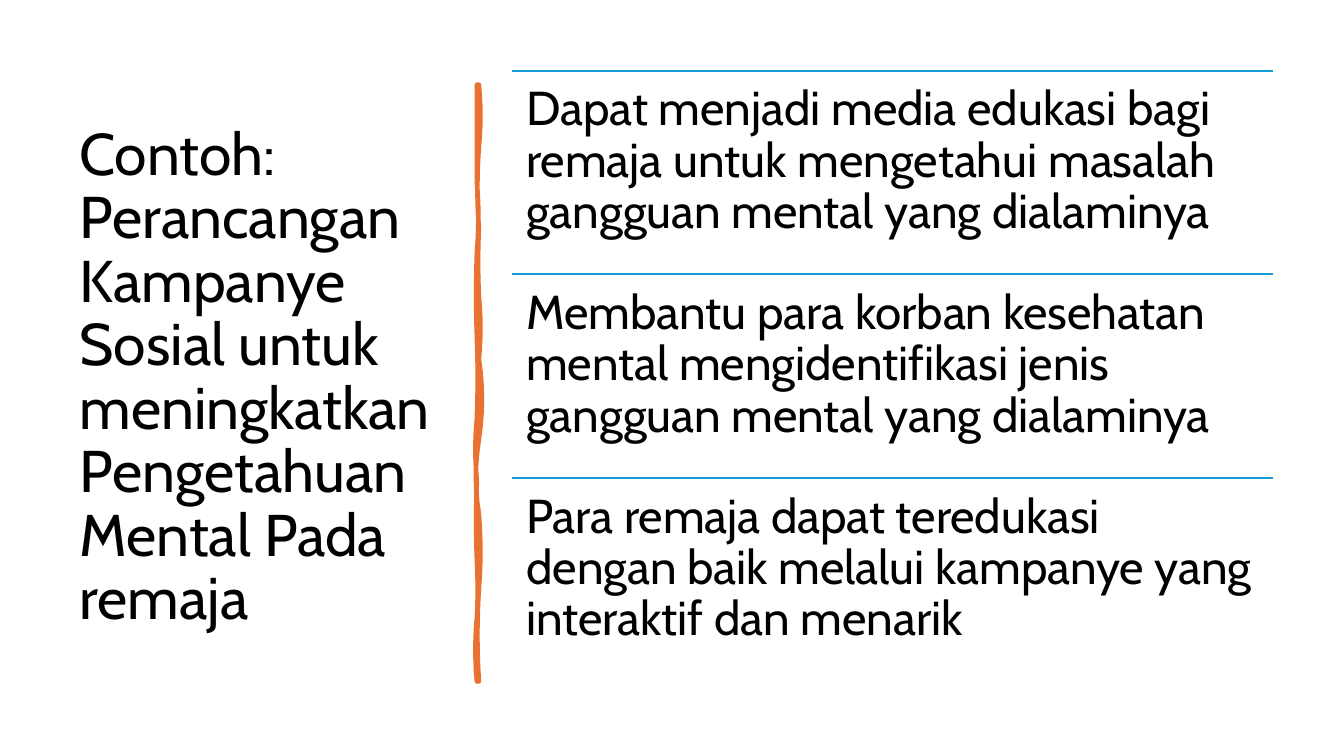
from lxml import etree
from pptx import Presentation
from pptx import util as u
from pptx.dml.color import RGBColor
from pptx.enum import shapes, text
from pptx.oxml.ns import qn

COLORS = {"text": "000000", "brush": "E97132", "rule": "0F9ED5"}
FONT = "Cabin"
TITLE = "Contoh: Perancangan Kampanye Sosial untuk meningkatkan Pengetahuan Mental Pada remaja"
BENEFITS = [
    "Dapat menjadi media edukasi bagi remaja untuk mengetahui masalah gangguan mental yang dialaminya",
    "Membantu para korban kesehatan mental mengidentifikasi jenis gangguan mental yang dialaminya",
    "Para remaja dapat teredukasi dengan baik melalui kampanye yang interaktif dan menarik",
]
# Each wave of the brush stroke: sideways bulge and the height where it ends, in inches
RIGHT_WAVES = [(0.02, 1.46), (-0.02, 2.26), (-0.01, 2.94), (0.02, 3.56), (0.04, 4.36),
               (-0.04, 5.1), (0.02, 5.84), (-0.02, 6.76)]
LEFT_WAVES = [(-0.02, 6.13), (0.01, 5.57), (-0.01, 4.77), (-0.02, 4.15), (0.01, 3.35),
              (-0.01, 2.5), (0.02, 1.81), (0, 0.84)]


def color(name):
    return RGBColor.from_string(COLORS[name])


def add_text(slide, box, words, size, inset_x, inset_y, anchor):
    frame = slide.shapes.add_textbox(*map(u.Inches, box)).text_frame
    frame_format = {
        "word_wrap": True, "vertical_anchor": anchor,
        "margin_left": u.Inches(inset_x), "margin_right": u.Inches(inset_x),
        "margin_top": u.Inches(inset_y), "margin_bottom": u.Inches(inset_y),
    }
    for name, value in frame_format.items():
        setattr(frame, name, value)
    paragraph = frame.paragraphs[0]
    paragraph.line_spacing = 0.9
    run = paragraph.add_run()
    run.text = words
    for name, value in {"name": FONT, "size": u.Pt(size)}.items():
        setattr(run.font, name, value)
    run.font.color.rgb = color("text")


def wave_points(x, top, waves, steps=6):
    """Sample one wavy edge, bulging between the ends of its waves."""
    points = []
    for bulge, bottom in waves:
        for step in range(1, steps + 1):
            t = step / steps
            points.append((u.Inches(x + 3 * bulge * t * (1 - t)),
                           u.Inches(top + (bottom - top) * t)))
        top = bottom
    return points


def add_brush_stroke(slide, left, top, width, height):
    right, bottom = left + width, top + height
    builder = slide.shapes.build_freeform(u.Inches(right), u.Inches(top))
    builder.add_line_segments(wave_points(right, top, RIGHT_WAVES), close=False)
    builder.add_line_segments([(u.Inches(left), u.Inches(bottom))], close=False)
    builder.add_line_segments(wave_points(left, bottom, LEFT_WAVES), close=True)
    stroke = builder.convert_to_shape()
    stroke.shadow.inherit = False
    stroke.fill.solid()
    stroke.fill.fore_color.rgb = color("brush")
    stroke.line.color.rgb = color("brush")
    stroke.line.width = u.Pt(3.25)
    etree.SubElement(stroke.line._get_or_add_ln(), qn("a:round"))


def add_rule(slide, left, top, width):
    ends = map(u.Inches, (left, top, left + width, top))
    rule = slide.shapes.add_connector(shapes.MSO_CONNECTOR.STRAIGHT, *ends)
    rule.line.color.rgb = color("rule")
    rule.line.width = u.Pt(1.5)
    etree.SubElement(rule._element.spPr, qn("a:effectLst"))


def add_benefits(slide, left, top, width, height):
    row_height = height / len(BENEFITS)
    for row, benefit in enumerate(BENEFITS):
        row_top = top + row * row_height
        add_rule(slide, left, row_top, width)
        add_text(slide, (left, row_top, width, row_height), benefit, 34,
                 0.14, 0.14, text.MSO_ANCHOR.TOP)


def main():
    presentation = Presentation()
    presentation.slide_width = u.Inches(13.33)
    presentation.slide_height = u.Inches(7.5)
    slide = presentation.slides.add_slide(presentation.slide_layouts[6])
    add_text(slide, (0.69, 0.7, 3.74, 6.11), TITLE, 42, 0.1, 0.05, text.MSO_ANCHOR.MIDDLE)
    add_brush_stroke(slide, 4.73, 0.84, 0.02, 5.92)
    add_benefits(slide, 5.08, 0.7, 7.55, 6.06)
    presentation.save("out.pptx")


if __name__ == "__main__":
    main()
